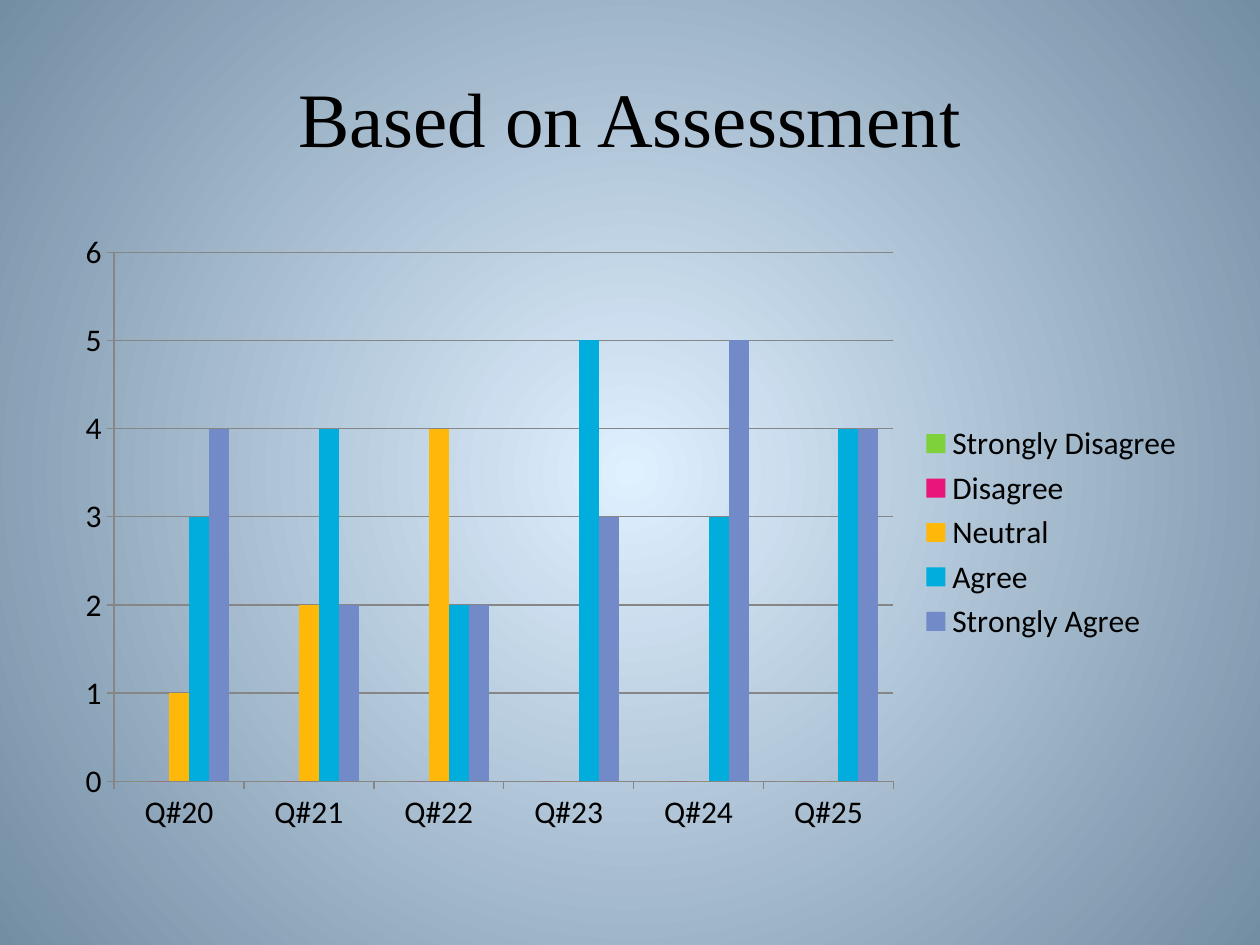
from lxml import etree
from pptx import Presentation
from pptx import util as u
from pptx.chart.data import CategoryChartData
from pptx.dml.color import RGBColor
from pptx.enum import chart as charts, text
from pptx.oxml import parse_xml
from pptx.oxml.ns import nsdecls

BLACK = RGBColor(0x00, 0x00, 0x00)
AXIS_GREY = RGBColor(0x86, 0x86, 0x86)
GLOW = RGBColor(0xDF, 0xF0, 0xFF)
EDGE = RGBColor(0x73, 0x8D, 0xA3)

QUESTIONS = [f"Q#{number}" for number in range(20, 26)]
ANSWERS = [
    ("Strongly Disagree", (0, 0, 0, 0, 0, 0), RGBColor(0x7F, 0xD1, 0x3B)),
    ("Disagree", (0, 0, 0, 0, 0, 0), RGBColor(0xEA, 0x15, 0x7A)),
    ("Neutral", (1, 2, 4, 0, 0, 0), RGBColor(0xFE, 0xB8, 0x0A)),
    ("Agree", (3, 4, 2, 5, 3, 4), RGBColor(0x00, 0xAD, 0xDC)),
    ("Strongly Agree", (4, 2, 2, 3, 5, 4), RGBColor(0x73, 0x8A, 0xC8)),
]


def paint_background(page):
    """Circular gradient, light in the centre."""
    fill = page.background.fill
    fill.gradient()
    for stop, colour, position in zip(fill.gradient_stops, (GLOW, EDGE), (0, 1)):
        stop.color.rgb = colour
        stop.position = position
    linear = page.element.xpath(".//p:bg//a:lin")[0]
    circle = parse_xml(
        f'<a:path {nsdecls("a")} path="circle">'
        '<a:fillToRect l="50000" t="50000" r="50000" b="50000"/></a:path>')
    linear.getparent().replace(linear, circle)


def add_title(page, left, top, width, height):
    box = page.shapes.add_textbox(left, top, width, height)
    frame = box.text_frame
    frame.word_wrap = True
    frame.vertical_anchor = text.MSO_ANCHOR.MIDDLE
    para = frame.paragraphs[0]
    para.text = "Based on Assessment"
    para.alignment = text.PP_ALIGN.CENTER
    para.font.name = "Times New Roman"
    para.font.size = u.Pt(44)
    para.font.color.rgb = BLACK


def style_line(line):
    line.color.rgb = AXIS_GREY
    line.width = u.Pt(0.75)


def add_answer_chart(page, left, top, width, height):
    data = CategoryChartData(number_format="General")
    data.categories = QUESTIONS
    for name, values, _ in ANSWERS:
        data.add_series(name, values)
    chart = page.shapes.add_chart(
        charts.XL_CHART_TYPE.COLUMN_CLUSTERED, left, top, width, height, data).chart
    chart.has_title = False
    chart.font.name = "Calibri"
    chart.font.size = u.Pt(18)
    chart.font.color.rgb = BLACK

    # Columns
    plot = chart.plots[0]
    plot.vary_by_categories = False
    plot.gap_width = 150
    plot.overlap = 0
    for series, (_, _, colour) in zip(plot.series, ANSWERS):
        series.format.fill.solid()
        series.format.fill.fore_color.rgb = colour

    # Axes and gridlines
    for axis in (chart.category_axis, chart.value_axis):
        axis.major_tick_mark = charts.XL_TICK_MARK.OUTSIDE
        style_line(axis.format.line)
    scale = chart.value_axis
    scale.minimum_scale, scale.maximum_scale, scale.major_unit = 0, 6, 1
    scale.has_major_gridlines = True
    style_line(scale.major_gridlines.format.line)

    # Legend
    chart.has_legend = True
    chart.legend.position = charts.XL_LEGEND_POSITION.RIGHT
    chart.legend.include_in_layout = False


def main():
    deck = Presentation()
    deck.slide_width, deck.slide_height = u.Cm(25.4), u.Cm(19.05)
    page = deck.slides.add_slide(deck.slide_layouts[6])
    margin = u.Cm(1.27)
    width = deck.slide_width - 2 * margin
    paint_background(page)
    add_title(page, margin, u.Cm(0.76), width, u.Cm(3.18))
    add_answer_chart(page, margin, u.Cm(4.45), width, u.Cm(12.57))
    deck.save("out.pptx")


if __name__ == "__main__":
    main()
